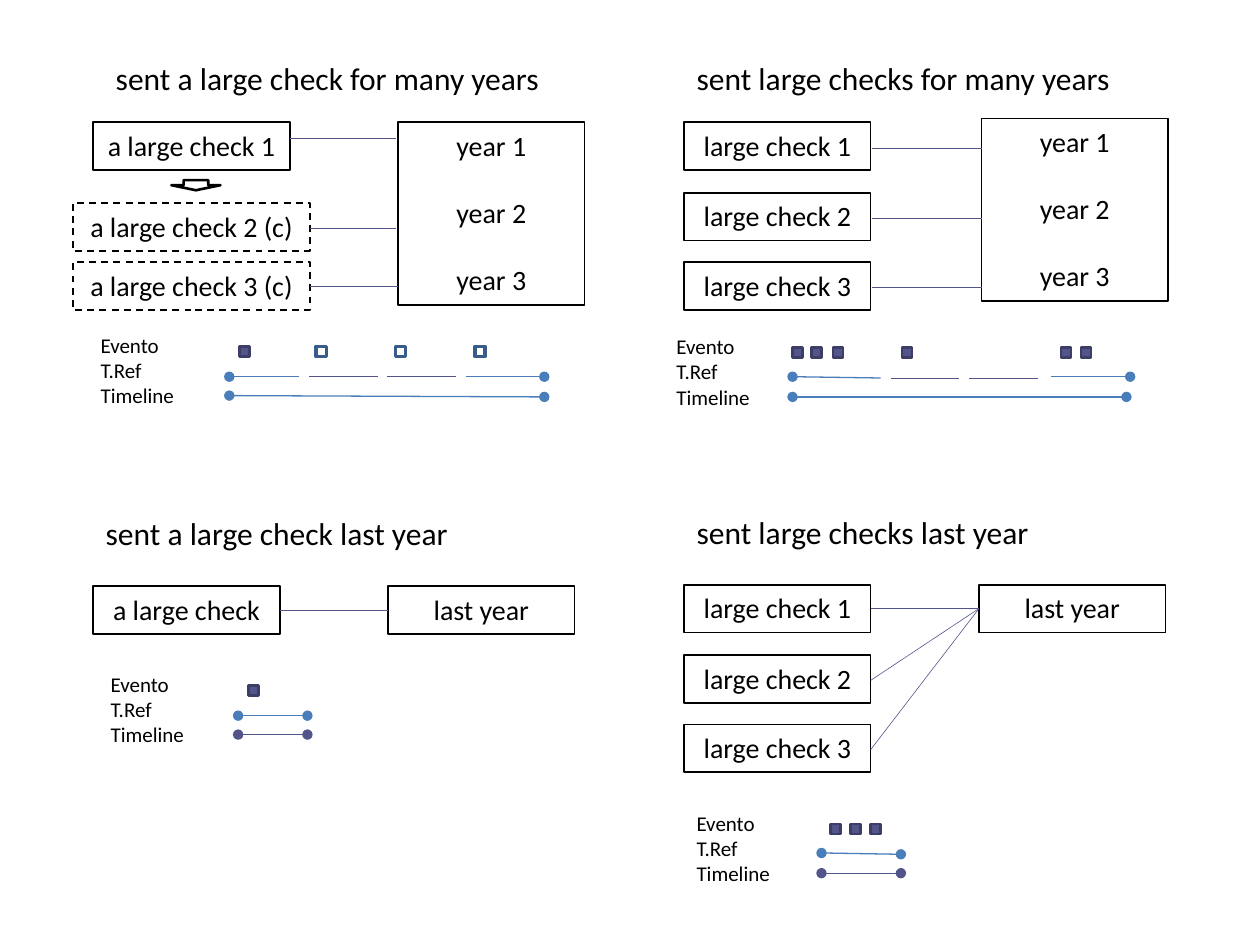
from lxml.etree import SubElement
from pptx import Presentation
from pptx.dml.color import RGBColor
from pptx.enum.dml import MSO_LINE
from pptx.enum.shapes import MSO_CONNECTOR, MSO_SHAPE
from pptx.enum.text import MSO_ANCHOR, PP_ALIGN
from pptx.oxml.ns import qn
from pptx.util import Inches, Pt

RECT, ARROW = MSO_SHAPE.RECTANGLE, MSO_SHAPE.DOWN_ARROW
LINE, DASH = MSO_CONNECTOR.STRAIGHT, MSO_LINE.DASH
LEFT, MID, TOP = PP_ALIGN.LEFT, PP_ALIGN.CENTER, MSO_ANCHOR.TOP
HEX = {"ink": "000000", "plum": "53548A", "edge": "3D3E66",
       "blue": "4A7EBB", "navy": "385D8A"}
RGB = {name: RGBColor.from_string(code) for name, code in HEX.items()}

deck = Presentation()
deck.slide_width, deck.slide_height = Inches(10), Inches(7.5)
COL, ROW = deck.slide_width / 100, deck.slide_height / 75
slide = deck.slides.add_slide(deck.slide_layouts[6])
shapes = slide.shapes


def place(x, y, wide, high, kind=RECT, fill=None, edge="ink", width=1):
    shape = shapes.add_shape(kind, int(x * COL), int(y * ROW), int(wide * COL), int(high * ROW))
    shape.shadow.inherit = False
    if fill:
        shape.fill.solid()
        shape.fill.fore_color.rgb = RGB[fill]
    else:
        shape.fill.background()
    shape.line.color.rgb = RGB[edge]
    shape.line.width = Pt(width)
    return shape


def write(shape, lines, size, align=LEFT, gap=0):
    frame = shape.text_frame
    frame.word_wrap = True
    frame.vertical_anchor = TOP
    frame.text = "\n".join(lines)
    for i, para in enumerate(frame.paragraphs):
        para.alignment = align
        para.space_before = Pt(gap if i else 0)
        para.font.size = Pt(size)
        para.font.name = "Calibri"
        para.font.color.rgb = RGB["ink"]


TITLE, LABEL = (39.1, 4), (8.6, 7)
ROLES = ["Evento", "T.Ref", "Timeline"]
notes = [
    (8.2, 4.2, TITLE, 18, ["sent a large check for many years"]),
    (54.3, 4.2, TITLE, 18, ["sent large checks for many years"]),
    (7.4, 40.3, TITLE, 18, ["sent a large check last year"]),
    (54.3, 40.2, TITLE, 18, ["sent large checks last year"]),
    (7, 25.9, LABEL, 12, ROLES),
    (52.7, 26, LABEL, 12, ROLES),
    (7.8, 52.8, LABEL, 12, ROLES),
    (54.3, 63.8, LABEL, 12, ROLES),
]
for x, y, (wide, high), size, lines in notes:
    note = shapes.add_textbox(int(x * COL), int(y * ROW), int(wide * COL), int(high * ROW))
    write(note, lines, size)

WIDE, HIGH = 14.8, 3.8
boxes = [
    (7.4, 9.7, 15.6, "a large check 1"),
    (7.4, 46.5, WIDE, "a large check"),
    (30.8, 46.5, WIDE, "last year"),
    (77.7, 46.4, WIDE, "last year"),
]
for top in (9.7, 46.4):
    for i, drop in enumerate((0, 5.6, 11.1)):
        boxes.append((54.3, top + drop, WIDE, f"large check {i + 1}"))
for x, y, wide, text in boxes:
    write(place(x, y, wide, HIGH), [text], 16, MID)

for i in (2, 3):
    box = place(5.8, 6.7 + 4.7 * i, 18.8, HIGH)
    box.line.dash_style = DASH
    write(box, [f"a large check {i} (c)"], 16, MID)

for x, y in ((31.6, 9.7), (77.9, 9.4)):
    write(place(x, y, WIDE, 14.5), ["year 1", "year 2", "year 3"], 16, MID, 19)

place(13.6, 14.3, 3.9, 0.8, ARROW, width=1.5)

marks = [
    (27.6, (62.9, 64.4, 66.1, 71.6, 84.2, 85.8)),
    (27.5, (19,)),
    (54.4, (19.7,)),
    (65.4, (65.9, 67.5, 69.1)),
]
for y, row in marks:
    for x in row:
        place(x, y, 0.8, 0.8, fill="plum", edge="edge", width=1.5)
for i in range(3):
    place(25.1 + 6.3 * i, 27.5, 0.8, 0.8, edge="navy", width=2)

HEAD, TAIL = ["headEnd"], ["tailEnd"]
BOTH = HEAD + TAIL
wires = [
    (23, 11, 31.4, 11, "plum", []),
    (24.6, 18.1, 31.4, 18.1, "plum", []),
    (24.6, 22.7, 31.6, 22.7, "plum", []),
    (22.2, 48.4, 30.8, 48.4, "plum", []),
    (18.2, 29.9, 23.7, 29.9, "blue", HEAD),
    (24.5, 29.9, 30, 29.9, "plum", []),
    (30.7, 29.9, 36.2, 29.9, "plum", []),
    (37, 29.9, 43.2, 29.9, "blue", TAIL),
    (18.2, 31.4, 43.2, 31.5, "blue", BOTH),
    (62.9, 29.9, 69.9, 30, "blue", HEAD),
    (70.7, 30, 76.1, 30, "plum", []),
    (76.9, 30, 82.4, 30, "plum", []),
    (83.4, 29.9, 89.7, 29.9, "blue", TAIL),
    (62.9, 31.5, 89.4, 31.5, "blue", BOTH),
    (18.9, 56.8, 24.4, 56.8, "blue", BOTH),
    (18.9, 58.3, 24.4, 58.3, "plum", BOTH),
    (65.2, 67.7, 71.5, 67.8, "blue", BOTH),
    (65.2, 69.3, 71.5, 69.3, "plum", BOTH),
]
wires += [(69.2, y, 77.9, y, "plum", []) for y in (11.8, 17.3, 22.8)]
wires += [(69.1, y, 77.7, 48.3, "plum", []) for y in (48.3, 54, 59.5)]
for x, y, right, low, tone, ends in wires:
    wire = shapes.add_connector(LINE, int(x * COL), int(y * ROW), int(right * COL), int(low * ROW))
    wire.line.color.rgb = RGB[tone]
    wire.line.width = Pt(0.75 if tone == "blue" else 0.35)
    for end in ends:
        SubElement(wire.line._get_or_add_ln(), qn(f"a:{end}"), type="oval")
    SubElement(wire._element.spPr, qn("a:effectLst"))

deck.save("out.pptx")
